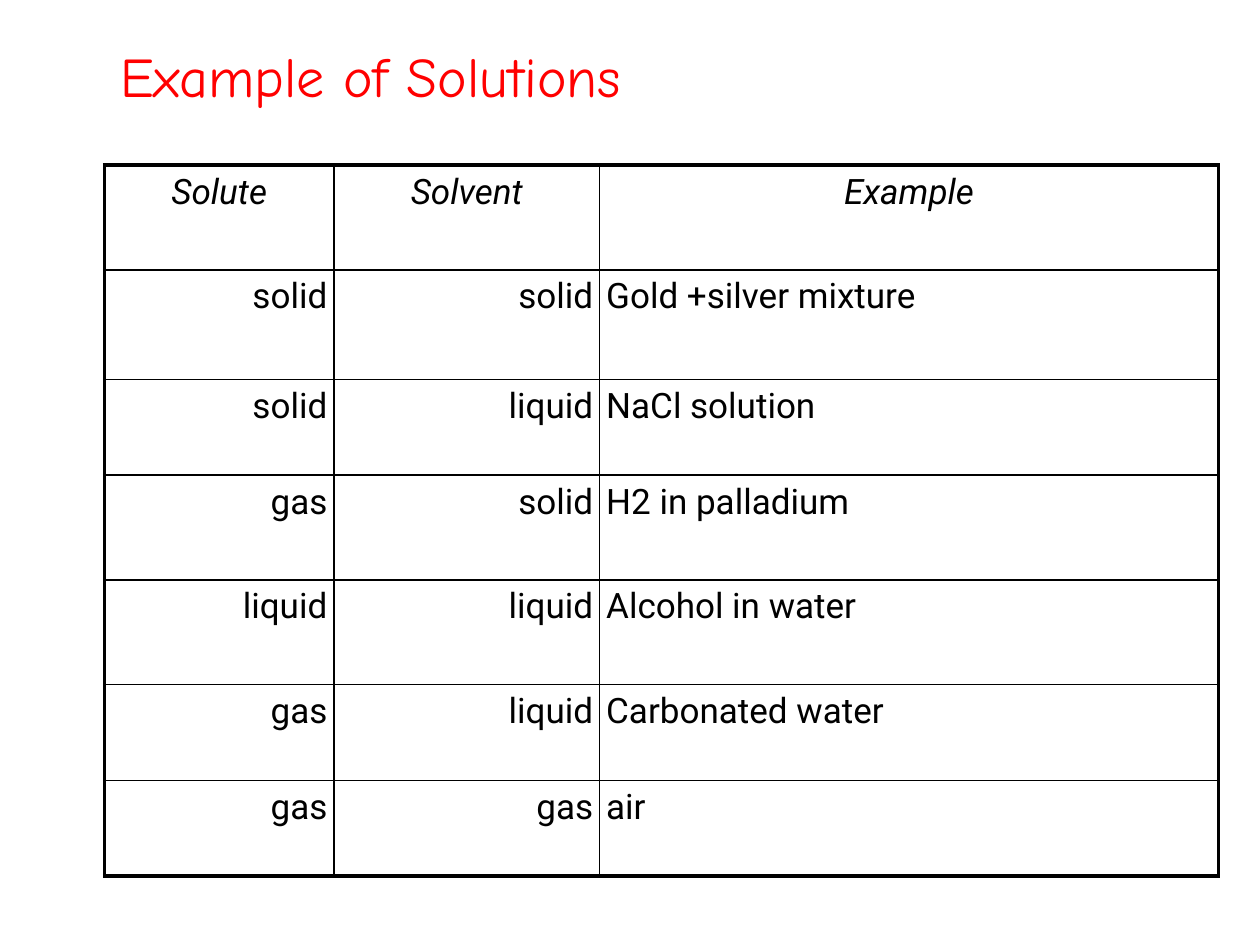
from typing import NamedTuple

from lxml.etree import SubElement
from pptx import Presentation
from pptx.dml.color import RGBColor
from pptx.enum.text import MSO_ANCHOR, PP_ALIGN
from pptx.oxml.ns import qn
from pptx.util import Cm, Pt

BLACK, RED = "000000", "FF0000"
INSET = Cm(0.13)
THIN, THICK = 1, 2.25


class Solution(NamedTuple):
    solute: str
    solvent: str
    example: str


class Column(NamedTuple):
    width: float
    align: PP_ALIGN


HEADINGS = Solution("Solute", "Solvent", "Example")
SOLUTIONS = [
    Solution("solid", "solid", "Gold +silver mixture"),
    Solution("solid", "liquid", "NaCl solution"),
    Solution("gas", "solid", "H2 in palladium"),
    Solution("liquid", "liquid", "Alcohol in water"),
    Solution("gas", "liquid", "Carbonated water"),
    Solution("gas", "gas", "air"),
]
COLUMNS = [
    Column(4.62, PP_ALIGN.RIGHT),
    Column(5.36, PP_ALIGN.RIGHT),
    Column(12.47, PP_ALIGN.LEFT),
]
ROW_HEIGHTS = [2.11, 2.21, 1.93, 2.11, 2.11, 1.93, 1.93]


def color(hex_code: str) -> RGBColor:
    return RGBColor.from_string(hex_code)


def write(frame, text: str, *, font: str, size: float, fill: str = BLACK,
          align: PP_ALIGN = PP_ALIGN.LEFT, italic: bool = False,
          before: float = 0, spacing: float = 1) -> None:
    """Put one formatted paragraph into a text frame."""
    paragraph = frame.paragraphs[0]
    paragraph.alignment = align
    paragraph.space_before = Pt(before)
    paragraph.line_spacing = spacing
    run = paragraph.add_run()
    run.text = text
    run.font.name = font
    run.font.size = Pt(size)
    run.font.bold = False
    run.font.italic = italic
    run.font.color.rgb = color(fill)


def set_insets(box) -> None:
    box.margin_left = box.margin_right = INSET
    box.margin_top = box.margin_bottom = INSET


def set_borders(cell, widths: dict[str, float]) -> None:
    """Add borders in schema order; the cell's fill is set afterwards."""
    properties = cell._tc.get_or_add_tcPr()
    for side, width in widths.items():
        line = SubElement(properties, qn(f"a:ln{side}"), w=str(Pt(width)))
        fill = SubElement(line, qn("a:solidFill"))
        SubElement(fill, qn("a:srgbClr"), val=BLACK)


def add_title(slide, text: str) -> None:
    title = slide.shapes.title
    title.left, title.top = Cm(2.29), Cm(0)
    title.width, title.height = Cm(19.89), Cm(3.18)
    frame = title.text_frame
    frame.word_wrap = True
    frame.vertical_anchor = MSO_ANCHOR.MIDDLE
    set_insets(frame)
    write(frame, text, font="Comic Neue", size=32, fill=RED, spacing=0.9)


def add_solution_table(slide, rows: list[Solution]) -> None:
    width = sum(column.width for column in COLUMNS)
    table = slide.shapes.add_table(
        len(rows), len(COLUMNS), Cm(2.11), Cm(3.33),
        Cm(width), Cm(sum(ROW_HEIGHTS))).table
    table.first_row = table.horz_banding = False
    for grid_column, column in zip(table.columns, COLUMNS):
        grid_column.width = Cm(column.width)
    for grid_row, height in zip(table.rows, ROW_HEIGHTS):
        grid_row.height = Cm(height)

    last_row, last_column = len(rows) - 1, len(COLUMNS) - 1
    for r, solution in enumerate(rows):
        heading = r == 0
        for c, (text, column) in enumerate(zip(solution, COLUMNS)):
            cell = table.cell(r, c)
            set_insets(cell)
            write(cell.text_frame, text, font="Roboto", size=20, before=4,
                  align=PP_ALIGN.CENTER if heading else column.align,
                  italic=heading)
            # Thick frame outside, thin rules inside
            set_borders(cell, {
                "L": THICK if c == 0 else THIN,
                "R": THICK if c == last_column else THIN,
                "T": THICK if heading else THIN,
                "B": THICK if r == last_row else THIN,
            })
            cell.fill.background()


def main() -> None:
    presentation = Presentation()
    presentation.slide_width, presentation.slide_height = Cm(25.4), Cm(19.05)
    slide = presentation.slides.add_slide(presentation.slide_layouts[5])

    # Title
    add_title(slide, "Example of Solutions")

    # Table of solutions
    add_solution_table(slide, [HEADINGS, *SOLUTIONS])

    presentation.save("out.pptx")


if __name__ == "__main__":
    main()
